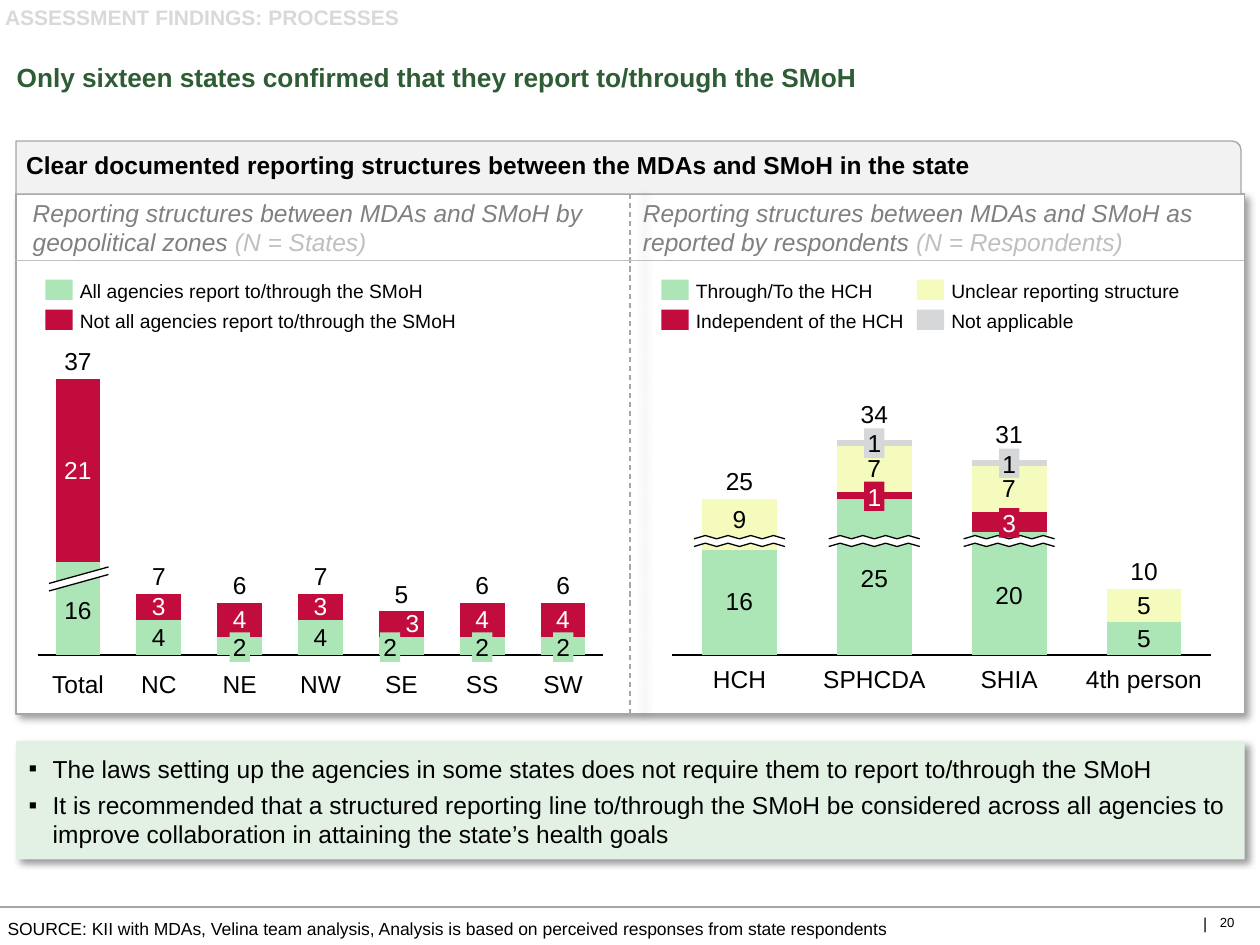
from dataclasses import dataclass

from lxml.etree import SubElement
from pptx import Presentation
from pptx.chart.data import CategoryChartData
from pptx.dml.color import RGBColor
from pptx.enum.chart import XL_CHART_TYPE as ChartType, XL_LABEL_POSITION as LabelPosition
from pptx.enum.chart import XL_TICK_LABEL_POSITION as TickLabels, XL_TICK_MARK as TickMark
from pptx.enum.dml import MSO_LINE as Dash
from pptx.enum.shapes import MSO_CONNECTOR as Connector, MSO_SHAPE as Preset
from pptx.enum.text import MSO_ANCHOR as Anchor, MSO_AUTO_SIZE as AutoSize, PP_ALIGN as Align
from pptx.oxml.ns import qn
from pptx.util import Pt

BLACK, WHITE = RGBColor(0, 0, 0), RGBColor(255, 255, 255)
DARK_GREEN = RGBColor(0x2E, 0x5C, 0x34)
PALE_GREEN = RGBColor(0xE3, 0xF1, 0xE5)
GREEN = RGBColor(0xAC, 0xE6, 0xB6)
RED = RGBColor(0xC3, 0x0C, 0x3E)
YELLOW = RGBColor(0xF5, 0xFB, 0xBC)
SILVER = RGBColor(0xD6, 0xD7, 0xD9)
HEADER = RGBColor(0xF2, 0xF2, 0xF2)
MUTED = RGBColor(0xD9, 0xD9, 0xD9)
RULE = RGBColor(0xBF, 0xBF, 0xBF)
BORDER = RGBColor(0xA6, 0xA6, 0xA6)
SUBTITLE = RGBColor(0x80, 0x80, 0x80)
FONT = "Arial"
LINE_HEIGHT = 16.8


@dataclass
class Panel:
    """Place and scale of one column chart, with lengths in points."""
    left: float
    top: float
    width: float
    height: float
    margin_x: float
    margin_y: float
    peak: float
    categories: tuple

    def center(self, index):
        step = self.width * (1 - 2 * self.margin_x) / len(self.categories)
        return self.left + self.width * self.margin_x + step * (index + 0.5)

    def level(self, value):
        """Height on the page of a chart value."""
        plot_height = self.height * (1 - 2 * self.margin_y)
        return self.top + self.height * self.margin_y + plot_height * (1 - value / self.peak)


def points(*lengths):
    return [Pt(length) for length in lengths]


def add_run(para, text, size, color=BLACK, bold=False, italic=False):
    span = para.add_run()
    span.text = text
    font = span.font
    font.name, font.size, font.bold, font.italic = FONT, Pt(size), bold, italic
    font.color.rgb = color


def set_frame(frame, anchor=Anchor.TOP, insets=(0, 0, 0, 0), wrap=True):
    frame.auto_size = AutoSize.NONE
    frame.word_wrap, frame.vertical_anchor = wrap, anchor
    frame.margin_left, frame.margin_top, frame.margin_right, frame.margin_bottom = points(*insets)


def add_text(page, place, text, size, color=BLACK, anchor=Anchor.TOP, align=Align.LEFT,
             wrap=True, **style):
    frame = page.shapes.add_textbox(*points(*place)).text_frame
    set_frame(frame, anchor, wrap=wrap)
    frame.paragraphs[0].alignment = align
    add_run(frame.paragraphs[0], text, size, color, **style)
    return frame.paragraphs[0]


def add_box(page, place, fill, line=None, preset=Preset.RECTANGLE):
    box = page.shapes.add_shape(preset, *points(*place))
    box.shadow.inherit = False
    paint(box, fill, line)
    return box


def paint(shape, fill, line):
    if fill is None:
        shape.fill.background()
    else:
        shape.fill.solid()
        shape.fill.fore_color.rgb = fill
    if line is None:
        shape.line.fill.background()
    else:
        shape.line.color.rgb, shape.line.width = line, Pt(0.75)


def add_shadow(shape, blur=4, distance=3, angle=45):
    properties = shape._element.spPr
    effects = properties.find(qn("a:effectLst"))
    if effects is None:
        effects = SubElement(properties, qn("a:effectLst"))
    outer = SubElement(effects, qn("a:outerShdw"), blurRad=str(Pt(blur)), dist=str(Pt(distance)),
                       dir=str(angle * 60000), algn="tl", rotWithShape="0")
    color = SubElement(outer, qn("a:srgbClr"), val="000000")
    SubElement(color, qn("a:alpha"), val="40000")


def add_rule(page, start, end, color, width=0.75):
    rule = page.shapes.add_connector(Connector.STRAIGHT, *points(*start, *end))
    rule.line.color.rgb, rule.line.width = color, Pt(width)
    SubElement(rule._element.spPr, qn("a:effectLst"))
    return rule


def add_outline(page, corners, fill=None, line=None):
    spots = [tuple(points(*corner)) for corner in corners]
    builder = page.shapes.build_freeform(*spots[0], scale=1.0)
    builder.add_line_segments(spots[1:], close=fill is not None)
    shape = builder.convert_to_shape()
    shape.shadow.inherit = False
    paint(shape, fill, line)


def add_break(page, upper, gap):
    """White band across a bar, edged by two black lines."""
    lower = [(x, y + gap) for x, y in upper]
    add_outline(page, upper + lower[::-1], fill=WHITE)
    for edge in (upper, lower):
        add_outline(page, edge, line=BLACK)


def add_number(page, center, top, text, fill=None, color=BLACK):
    place = (center - 5.8, top, 11.6, LINE_HEIGHT)
    if fill is not None:
        add_box(page, place, fill)
    add_text(page, place, text, 14, color, Anchor.MIDDLE, Align.CENTER, wrap=False)


def add_layout(parent, position, **values):
    layout = parent.makeelement(qn("c:layout"))
    manual = SubElement(layout, qn("c:manualLayout"))
    for name, value in values.items():
        SubElement(manual, qn(f"c:{name}"), val=str(value))
    parent.insert(position, layout)


def add_columns(page, panel, series_rows):
    """Rows hold name, values, fill, label colour and labelled points."""
    data = CategoryChartData()
    data.categories = panel.categories
    for name, values, *_ in series_rows:
        data.add_series(name, values)
    place = points(panel.left, panel.top, panel.width, panel.height)
    chart = page.shapes.add_chart(ChartType.COLUMN_STACKED, *place, data).chart
    chart.has_legend = chart.has_title = False
    chart.font.name, chart.font.size, chart.font.color.rgb = FONT, Pt(10), BLACK
    axis, scale = chart.category_axis, chart.value_axis
    axis.tick_label_position, axis.major_tick_mark = TickLabels.NONE, TickMark.NONE
    axis.format.line.color.rgb, axis.format.line.width = BLACK, Pt(0.75)
    scale.minimum_scale, scale.maximum_scale = 0, panel.peak
    scale.has_major_gridlines = scale.visible = False
    plot = chart.plots[0]
    plot.gap_width, plot.overlap, plot.vary_by_categories = 80, 100, False
    for series, (_, _, fill, color, labelled) in zip(plot.series, series_rows):
        series.format.fill.solid()
        series.format.fill.fore_color.rgb = fill
        series.data_labels.show_value = False
        for index in labelled:
            label = series.points[index].data_label
            label.position = LabelPosition.CENTER
            label.font.name, label.font.size, label.font.color.rgb = FONT, Pt(14), color
    area = chart._chartSpace.chart.plotArea
    for layout in area.findall(qn("c:layout")):
        area.remove(layout)
    add_layout(area, 0, layoutTarget="inner", xMode="edge", yMode="edge",
               x=panel.margin_x, y=panel.margin_y,
               w=1 - 2 * panel.margin_x, h=1 - 2 * panel.margin_y)
    return plot


def add_captions(page, panel, top, totals, label_bottoms):
    for index, (name, total, bottom) in enumerate(zip(panel.categories, totals, label_bottoms)):
        for text, y in ((name, top), (total, bottom - LINE_HEIGHT)):
            add_text(page, (panel.center(index) - 35, y, 70, LINE_HEIGHT), text, 14,
                     align=Align.CENTER, wrap=False)


def add_legend(page, left, entries):
    for row, (text, color) in enumerate(entries):
        y = 159.8 + 17.2 * row
        add_box(page, (left, y, 15.6, 11.6), color)
        add_text(page, (left + 19.6, y, 215, 12.9), text, 11, anchor=Anchor.MIDDLE, wrap=False)


def add_zone_chart(page):
    panel = Panel(15.1, 210.2, 336.2, 170.6, 0.019, 0.038, 31.6,
                  ("Total", "NC", "NE", "NW", "SE", "SS", "SW"))
    agree, differ = (10.6, 4, 2, 4, 2, 2, 2), (21, 3, 4, 3, 3, 4, 4)
    plot = add_columns(page, panel, [
        ("All agencies report", agree, GREEN, BLACK, (1, 3)),
        ("Not all agencies report", differ, RED, WHITE, range(7))])
    crowded = plot.series[1]._element.xpath('.//c:dLbl[c:idx/@val="4"]')[0]
    add_layout(crowded, 1, x=0.019, y=0)
    add_break(page, [(28, 333.4), (62, 324)], 4.3)
    add_captions(page, panel, 382.3, ("37", "7", "6", "7", "5", "6", "6"),
                 [panel.level(sum(pair)) - 2 for pair in zip(agree, differ)])
    add_number(page, panel.center(0), 340, "16")
    for index, shift in ((2, 0), (4, -6.5), (5, 0), (6, 0)):
        add_number(page, panel.center(index) + shift, 361.4, "2", GREEN)
    add_legend(page, 26, [("All agencies report to/through the SMoH", GREEN),
                          ("Not all agencies report to/through the SMoH", RED)])


def add_respondent_chart(page):
    panel = Panel(377.6, 244.8, 321.1, 136.1, 0.02, 0.048, 32.7,
                  ("HCH", "SPHCDA", "SHIA", "4th person"))
    plot = add_columns(page, panel, [
        ("Through/To the HCH", (16, 23.7, 18.7, 5), GREEN, BLACK, (0, 3)),
        ("Independent of the HCH", (7.7, 1, 3, 5), RED, BLACK, (3,)),
        ("Unclear reporting structure", (None, 7, 7, None), YELLOW, BLACK, (1, 2)),
        ("Not applicable", (None, 1, 1, None), SILVER, BLACK, ())])
    for index in (0, 3):
        fill = plot.series[1].points[index].format.fill
        fill.solid()
        fill.fore_color.rgb = YELLOW
    for index in range(3):
        left = panel.center(index) - 26
        add_break(page, [(left + 6.5 * step, 306 if step % 2 else 307.9) for step in range(9)], 4.4)
    tag_tops = {1: 244.8, 2: 256.3}
    bottoms = [tag_tops.get(index, panel.level(height) - 2)
               for index, height in enumerate((23.7, 32.7, 29.7, 10))]
    add_captions(page, panel, 379.4, ("25", "34", "31", "10"), bottoms)
    for index, top in tag_tops.items():
        add_number(page, panel.center(index), top, "1", SILVER)
    for index, top, text, fill, color in (
            (0, 288.2, "9", None, BLACK), (1, 322, "25", None, BLACK), (2, 331.2, "20", None, BLACK),
            (1, 275.2, "1", RED, WHITE), (2, 290.4, "3", RED, WHITE)):
        add_number(page, panel.center(index), top, text, fill, color)
    add_legend(page, 378, [("Through/To the HCH", GREEN), ("Independent of the HCH", RED)])
    add_legend(page, 524, [("Unclear reporting structure", YELLOW), ("Not applicable", SILVER)])


def place_placeholder(shape, place):
    shape.left, shape.top, shape.width, shape.height = points(*place)
    return shape.text_frame


def fill_title(shape, text):
    frame = place_placeholder(shape, (4.5, 20.2, 700, 50.4))
    set_frame(frame, Anchor.MIDDLE, (5, 2.9, 5, 2.9))
    para = frame.paragraphs[0]
    para.alignment, para.line_spacing = Align.LEFT, 0.9
    add_run(para, text, 15, DARK_GREEN, bold=True)


def fill_findings(shape, lines):
    frame = place_placeholder(shape, (9.2, 423.4, 702, 67.7))
    paint(shape, PALE_GREEN, None)
    add_shadow(shape)
    set_frame(frame, insets=(7.2, 7.2, 0, 5.8))
    for index, text in enumerate(lines):
        para = frame.add_paragraph() if index else frame.paragraphs[0]
        properties = para._p.get_or_add_pPr()
        properties.set("marL", str(Pt(13.7)))
        properties.set("indent", str(Pt(-13.7)))
        SubElement(properties, qn("a:buFont"), typeface=FONT)
        SubElement(properties, qn("a:buChar"), char="▪")
        para.space_before, para.space_after = Pt(2 if index else 0), Pt(2)
        add_run(para, text, 14)


def add_frame(page):
    add_shadow(add_box(page, (9.2, 110.9, 702, 297.1), WHITE, BORDER))
    header = add_box(page, (9.2, 80.6, 700, 30.3), HEADER, BORDER, Preset.ROUND_1_RECTANGLE)
    set_frame(header.text_frame, Anchor.MIDDLE, (5.8, 0, 2.9, 2.9))
    para = header.text_frame.paragraphs[0]
    para.alignment = Align.LEFT
    add_run(para, "Clear documented reporting structures between the MDAs and SMoH in the state",
            14, bold=True)
    divider = add_rule(page, (360, 408), (360, 110.9), BORDER)
    divider.line.dash_style = Dash.DASH
    add_shadow(divider, blur=5, distance=8, angle=0)
    for left, text, unit in (
            (18.7, "Reporting structures between MDAs and SMoH by geopolitical zones ", "(N = States)"),
            (367.4, "Reporting structures between MDAs and SMoH as reported by respondents ",
             "(N = Respondents)")):
        para = add_text(page, (left, 113, 334, 33.8), text, 14, SUBTITLE, Anchor.MIDDLE, italic=True)
        add_run(para, unit, 14, RULE, italic=True)


def main():
    deck = Presentation()
    deck.slide_width, deck.slide_height = points(720, 540)
    page = deck.slides.add_slide(deck.slide_layouts[1])
    title, findings = page.placeholders
    fill_title(title, "Only sixteen states confirmed that they report to/through the SMoH")
    fill_findings(findings, (
        "The laws setting up the agencies in some states does not require them to report "
        "to/through the SMoH",
        "It is recommended that a structured reporting line to/through the SMoH be considered "
        "across all agencies to improve collaboration in attaining the state’s health goals"))
    add_text(page, (2.9, 2.9, 690, 14.4), "ASSESSMENT FINDINGS: PROCESSES", 12, MUTED, bold=True)
    add_frame(page)
    add_zone_chart(page)
    add_respondent_chart(page)
    add_rule(page, (0, 518.4), (720, 518.4), BORDER, 1)
    add_rule(page, (8.6, 149), (710.6, 149), RULE)
    add_text(page, (4.3, 524.5, 536, 12.2), "SOURCE: KII with MDAs, Velina team analysis, "
             "Analysis is based on perceived responses from state respondents", 10)
    add_text(page, (687.6, 522, 2.2, 10.8), "|", 9, anchor=Anchor.MIDDLE, align=Align.RIGHT, wrap=False)
    add_text(page, (697, 522.7, 15.1, 12.2), "20", 7.5, wrap=False)
    deck.save("out.pptx")


if __name__ == "__main__":
    main()
